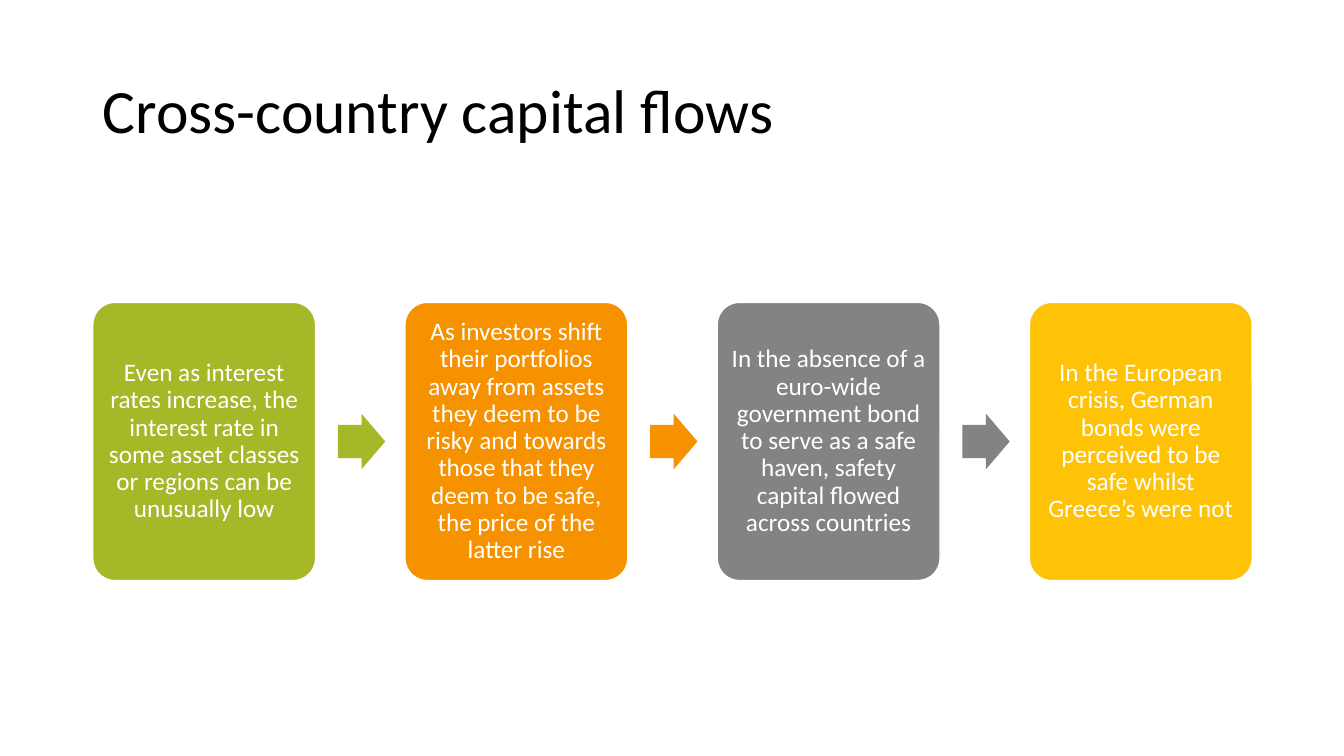
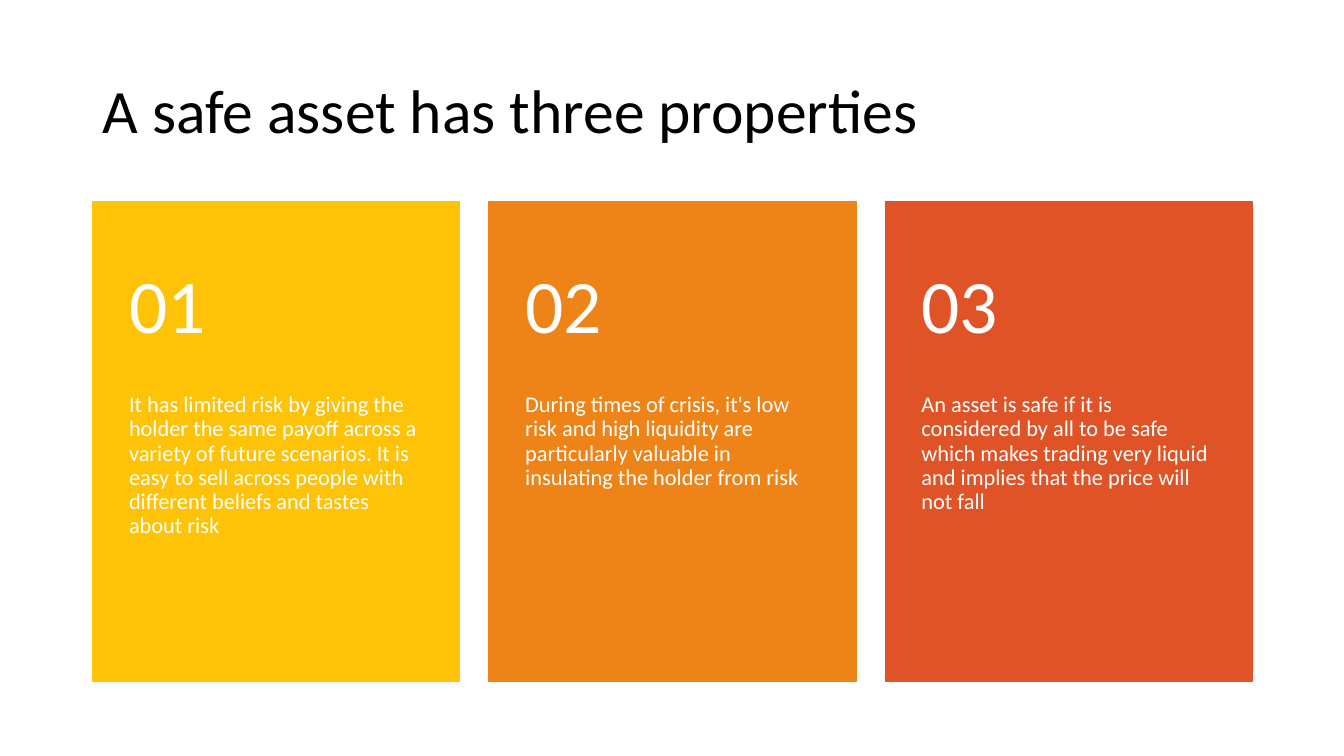
from dataclasses import dataclass

from pptx import Presentation
from pptx.dml.color import RGBColor
from pptx.enum.shapes import MSO_SHAPE as Shape
from pptx.enum.text import MSO_ANCHOR as Anchor, PP_ALIGN as Align
from pptx.util import Inches, Pt


@dataclass(frozen=True)
class Theme:
    font: str = "Calibri"
    black: str = "000000"
    white: str = "FFFFFF"
    green: str = "A6B727"
    amber: str = "F69200"
    grey: str = "838383"
    yellow: str = "FEC306"
    orange: str = "EE8317"
    red: str = "DF5327"
    title_size: int = 44
    number_size: int = 54
    step_size: int = 18
    card_size: int = 16
    line_spacing: float = 0.9
    outline: int = 1


@dataclass(frozen=True)
class Box:
    """A region of a slide, in inches."""
    left: float
    top: float
    width: float
    height: float

    def lengths(self):
        return [Inches(v) for v in (self.left, self.top, self.width, self.height)]

    def columns(self, count, width):
        """Split into equally spaced columns that fill the box from edge to edge."""
        pitch = (self.width - width) / (count - 1)
        return [Box(self.left + i * pitch, self.top, width, self.height)
                for i in range(count)]


THEME = Theme()
TITLE_BOX = Box(0.92, 0.4, 11.5, 1.45)
STEPS_BOX = Box(0.92, 3, 11.5, 2.76)
CARDS_BOX = Box(0.92, 2, 11.5, 4.76)
STEP_WIDTH = 2.21
CARD_WIDTH = 3.64

STEPS = [
    ("Even as interest rates increase, the interest rate in some asset classes "
     "or regions can be unusually low", THEME.green),
    ("As investors shift their portfolios away from assets they deem to be risky "
     "and towards those that they deem to be safe, the price of the latter rise",
     THEME.amber),
    ("In the absence of a euro-wide government bond to serve as a safe haven, "
     "safety capital flowed across countries", THEME.grey),
    ("In the European crisis, German bonds were perceived to be safe whilst "
     "Greece’s were not", THEME.yellow),
]
CARDS = [
    ("It has limited risk by giving the holder the same payoff across a variety "
     "of future scenarios. It is easy to sell across people with different "
     "beliefs and tastes about risk", THEME.yellow),
    ("During times of crisis, it's low risk and high liquidity are particularly "
     "valuable in insulating the holder from risk", THEME.orange),
    ("An asset is safe if it is considered by all to be safe which makes trading "
     "very liquid and implies that the price will not fall", THEME.red),
]


def write(shape, text, *, size, color=THEME.white, align=Align.LEFT,
          anchor=Anchor.MIDDLE, insets=(0.1, 0.05, 0.1, 0.05)):
    """Put one formatted paragraph in a shape; insets are left, top, right, bottom."""
    frame = shape.text_frame
    frame.word_wrap = True
    frame.vertical_anchor = anchor
    (frame.margin_left, frame.margin_top,
     frame.margin_right, frame.margin_bottom) = [Inches(v) for v in insets]
    para = frame.paragraphs[0]
    para.alignment = align
    para.line_spacing = THEME.line_spacing
    span = para.add_run()
    span.text = text
    span.font.name = THEME.font
    span.font.size = Pt(size)
    span.font.color.rgb = RGBColor.from_string(color)


def add_text(page, box, text, **text_format):
    write(page.shapes.add_textbox(*box.lengths()), text, **text_format)


def add_block(page, preset, box, fill, outline=None, adjustments=()):
    block = page.shapes.add_shape(preset, *box.lengths())
    block.shadow.inherit = False
    for index, value in enumerate(adjustments):
        block.adjustments[index] = value
    block.fill.solid()
    block.fill.fore_color.rgb = RGBColor.from_string(fill)
    if outline:
        block.line.color.rgb = RGBColor.from_string(outline)
        block.line.width = Pt(THEME.outline)
    else:
        block.line.fill.background()
    return block


def add_page(deck, title):
    page = deck.slides.add_slide(deck.slide_layouts[6])
    add_text(page, TITLE_BOX, title, size=THEME.title_size, color=THEME.black)
    return page


def add_step(page, box, text, color):
    step = add_block(page, Shape.ROUNDED_RECTANGLE, box, color,
                     outline=THEME.white, adjustments=[0.1])
    write(step, text, size=THEME.step_size, align=Align.CENTER, insets=[0.07] * 4)


def add_step_arrow(page, box, color):
    """Place an arrow in the gap to the right of a step's box."""
    width, height = 0.47, 0.55
    arrow_box = Box(box.left + 1.1 * box.width,
                    box.top + (box.height - height) / 2, width, height)
    add_block(page, Shape.RIGHT_ARROW, arrow_box, color, adjustments=[0.6, 0.5])


def add_process(page, area, steps):
    boxes = area.columns(len(steps), STEP_WIDTH)
    for index, (box, (text, color)) in enumerate(zip(boxes, steps), start=1):
        add_step(page, box, text, color)
        if index < len(steps):
            add_step_arrow(page, box, color)


def add_card(page, box, number, text, color):
    body_top = 0.4 * box.height
    body_box = Box(box.left, box.top + body_top, box.width, box.height - body_top)
    number_box = Box(box.left, box.top + 0.19, box.width, 1.75)
    add_block(page, Shape.RECTANGLE, box, color, outline=color)
    add_text(page, body_box, text, size=THEME.card_size, anchor=Anchor.TOP,
             insets=(0.36, 0, 0.36, 0.36))
    add_text(page, number_box, f"{number:02}", size=THEME.number_size,
             insets=(0.36, 0.18, 0.36, 0.18))


def add_cards(page, area, cards):
    boxes = area.columns(len(cards), CARD_WIDTH)
    for number, (box, (text, color)) in enumerate(zip(boxes, cards), start=1):
        add_card(page, box, number, text, color)


def main():
    deck = Presentation()
    deck.slide_width, deck.slide_height = Inches(13.33), Inches(7.5)
    add_process(add_page(deck, "Cross-country capital flows"), STEPS_BOX, STEPS)
    add_cards(add_page(deck, "A safe asset has three properties"), CARDS_BOX, CARDS)
    deck.save("out.pptx")


if __name__ == "__main__":
    main()
